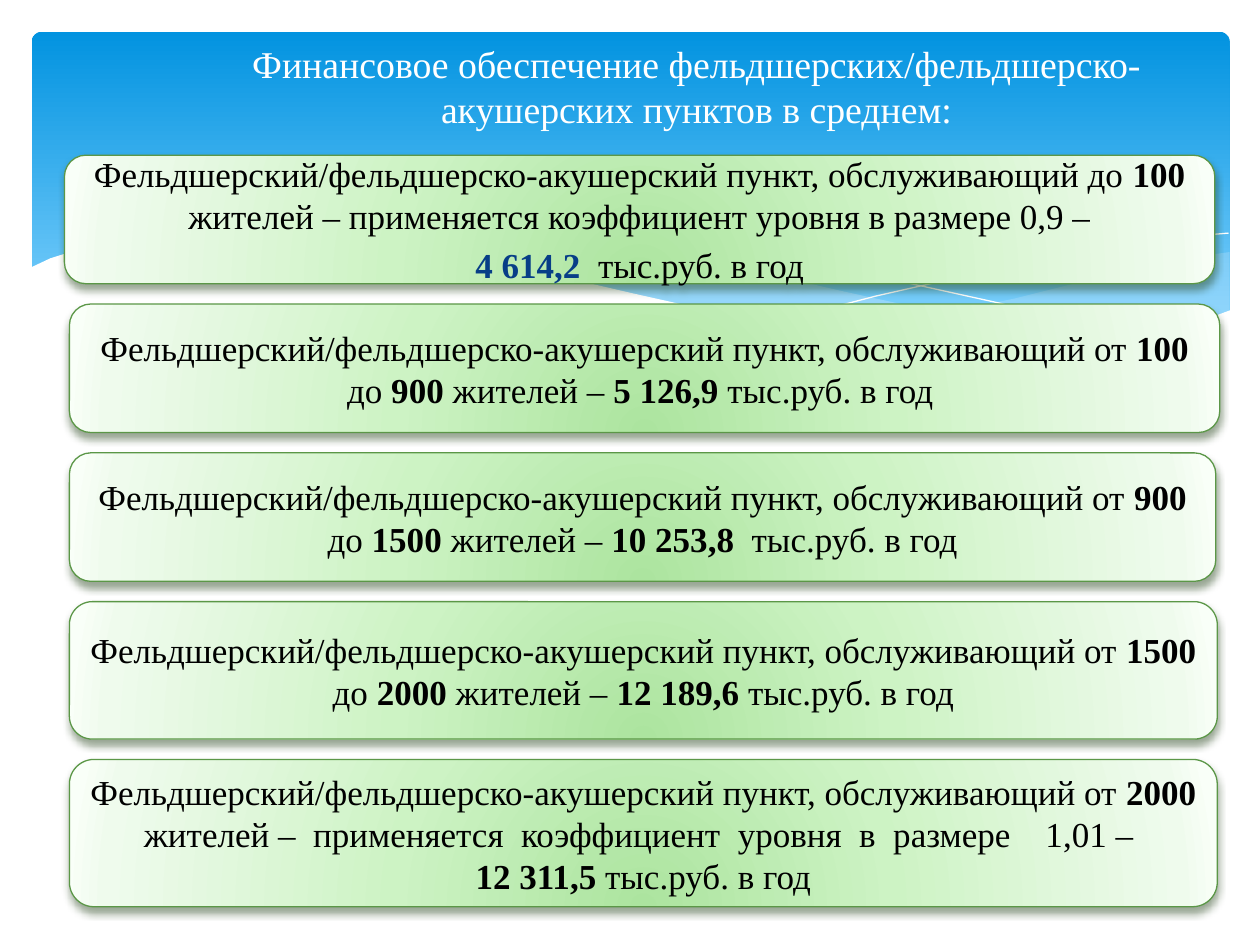
"""Slide on the average funding of rural paramedic stations, by population served."""
from collections import namedtuple

from lxml import etree
from pptx import Presentation
from pptx.dml.color import RGBColor
from pptx.enum.shapes import MSO_SHAPE
from pptx.enum.text import MSO_ANCHOR, MSO_AUTO_SIZE, PP_ALIGN
from pptx.oxml import parse_xml
from pptx.oxml.ns import qn
from pptx.util import Cm, Pt

ROUNDED = MSO_SHAPE.ROUNDED_RECTANGLE
MIDDLE = MSO_ANCHOR.MIDDLE
NO_AUTOFIT = MSO_AUTO_SIZE.NONE
CENTER = PP_ALIGN.CENTER

FONT = "Times New Roman"
WHITE, BLACK, NAVY = "FFFFFF", "000000", "073E87"
PALE_BLUE, CARD_EDGE = "C6E7FC", "5B9747"
SKY_STOPS = [(0, "0293E0"), (0.9, "83D3FE")]
CARD_STOPS = [(0, "ACE49F"), (43, "CDF3C4"), (93, "EFFBED"), (100, "F9FFF8")]
WAVE_UNIT = Cm(2.54) / 100

NS = 'xmlns:a="http://schemas.openxmlformats.org/drawingml/2006/main"'
CARD_GEOMETRY = f'<a:prstGeom {NS} prst="roundRect"><a:avLst/></a:prstGeom>'
STOPS_XML = "".join(
    f'<a:gs pos="{percent * 1000}"><a:srgbClr val="{tone}"/></a:gs>' for percent, tone in CARD_STOPS
)
CARD_GRADIENT = (
    f'<a:gradFill {NS} rotWithShape="1"><a:gsLst>{STOPS_XML}</a:gsLst><a:path path="circle">'
    '<a:fillToRect l="50000" t="130000" r="50000" b="-30000"/></a:path></a:gradFill>'
)
CARD_SHADOW = (
    f'<a:outerShdw {NS} blurRad="{Pt(4.5)}" dist="{Pt(3)}" dir="5400000" rotWithShape="0">'
    '<a:srgbClr val="2B4821"><a:alpha val="48000"/></a:srgbClr></a:outerShdw>'
)


def color(hex_value):
    return RGBColor.from_string(hex_value)


def add_run(paragraph, text, size, hex_value, bold=False):
    run = paragraph.add_run()
    run.text = text
    run.font.name, run.font.size, run.font.bold = FONT, Pt(size), bold
    run.font.color.rgb = color(hex_value)


prs = Presentation()
prs.slide_width, prs.slide_height = Cm(25.4), Cm(19.05)
slide = prs.slides.add_slide(prs.slide_layouts[1])
shapes = slide.shapes
title, first_card = slide.placeholders

sky = shapes.add_shape(ROUNDED, Cm(0.64), Cm(0.64), Cm(24.15), Cm(6.86))
sky.adjustments[0] = 0.03
sky.shadow.inherit = False
sky.line.fill.background()
sky.fill.gradient()
sky.fill.gradient_angle = 270
for stop, (position, tone) in zip(sky.fill.gradient_stops, SKY_STOPS):
    stop.position, stop.color.rgb = position, color(tone)

right_wave = [
    (976, 200), (948, 204), (921, 210), (891, 216), (861, 223), (805, 237), (753, 248), (706, 257),
    (661, 265), (691, 269), (719, 272), (745, 275), (769, 277), (803, 278), (835, 277), (863, 275),
    (889, 272), (913, 267), (935, 262), (963, 252), (976, 247),
]
long_wave = [
    (893, 273), (866, 269), (807, 260), (741, 247), (668, 231), (629, 222), (598, 214), (569, 208),
    (541, 203), (514, 198), (489, 194), (442, 189), (399, 186), (361, 185), (328, 187), (286, 191),
    (323, 196), (362, 203), (404, 211), (449, 222), (530, 240), (601, 255), (650, 264), (695, 270),
    (736, 275), (773, 277), (807, 278), (838, 278), (867, 276),
]
white_wave = [
    (977, 246), (950, 256), (920, 265), (887, 271), (850, 275), (809, 277), (761, 275), (708, 270),
    (648, 262), (579, 250), (503, 233), (447, 220), (391, 207), (340, 197), (292, 190), (250, 186),
    (211, 184), (161, 184), (119, 187), (85, 193), (59, 199), (40, 205), (23, 213), (23, 329),
    (977, 329),
]
falling_line = [
    (309, 195), (328, 192), (353, 189), (387, 187), (433, 187), (469, 189), (510, 192), (556, 197),
    (608, 204), (665, 213), (727, 226), (795, 241), (869, 261), (907, 272),
]
rising_line = [
    (613, 257), (653, 246), (695, 235), (748, 223), (806, 210), (866, 199), (895, 194), (924, 190),
    (951, 187), (975, 185),
]
Wave = namedtuple("Wave", "points tone opacity filled")
waves = [
    Wave(right_wave, PALE_BLUE, 29, True),
    Wave(long_wave, PALE_BLUE, 40, True),
    Wave(falling_line, WHITE, 100, False),
    Wave(rising_line, WHITE, 100, False),
    Wave(white_wave, WHITE, 100, True),
]
for wave in waves:
    builder = shapes.build_freeform(*wave.points[0], scale=WAVE_UNIT)
    builder.add_line_segments(wave.points[1:], close=wave.filled)
    ribbon = builder.convert_to_shape()
    ribbon.shadow.inherit = False
    if wave.filled:
        ribbon.line.fill.background()
        ribbon.fill.solid()
        ribbon.fill.fore_color.rgb = color(wave.tone)
        tint = ribbon.element.spPr.find(qn("a:solidFill"))[0]
        etree.SubElement(tint, qn("a:alpha")).set("val", str(wave.opacity * 1000))
    else:
        ribbon.fill.background()
        ribbon.line.color.rgb = color(wave.tone)
        ribbon.line.width = Pt(0)

for placeholder in (first_card, title):
    shapes._spTree.append(placeholder.element)

title.left, title.top, title.width, title.height = Cm(3.91), Cm(0.33), Cm(20.27), Cm(2.79)
title.text_frame.auto_size = NO_AUTOFIT
title.text_frame.vertical_anchor = MIDDLE
heading = title.text_frame.paragraphs[0]
heading.alignment = CENTER
add_run(heading, "Финансовое обеспечение фельдшерских/фельдшерско-акушерских пунктов в среднем:", 21.6, WHITE)

NBSP = chr(160)
STATION = "Фельдшерский/фельдшерско-акушерский пункт, обслуживающий"
PER_YEAR = "тыс.руб. в год"
BOLD_MARK = "*"
Card = namedtuple("Card", "left width height space_before lines")
cards = [
    Card(1.3, 23.19, 2.59, 4, [
        f"{STATION} до *100 *жителей – применяется коэффициент уровня в размере 0,9 –",
        f"*4 614,2  *{PER_YEAR}",
    ]),
    Card(1.4, 23.19, 2.59, 4, [f"{STATION} от *100 *до *900* жителей – *5 126,9 *{PER_YEAR} "]),
    Card(1.4, 23.11, 2.59, 0, [f"{STATION} от *900 *до *1500* жителей – *10 253,8  *{PER_YEAR}"]),
    Card(1.4, 23.14, 2.77, 0, [f"{STATION} от *1500* до *2000* жителей – *12 189,6 *{PER_YEAR}"]),
    Card(1.4, 23.14, 2.97, 0, [
        f"{STATION} от *2000* жителей –  применяется  коэффициент  уровня  в  размере    1,01 –  "
        f"*12{NBSP}311,5 *{PER_YEAR}",
    ]),
]
card_top, card_gap = 3.13, 0.41
for card in cards:
    box = Cm(card.left), Cm(card_top), Cm(card.width), Cm(card.height)
    card_top += card.height + card_gap
    if card is cards[0]:
        panel = first_card
        panel.left, panel.top, panel.width, panel.height = box
        panel.element.spPr.append(parse_xml(CARD_GEOMETRY))
    else:
        panel = shapes.add_shape(ROUNDED, *box)
    panel.element.spPr.append(parse_xml(CARD_GRADIENT))
    panel.line.color.rgb = color(CARD_EDGE)
    panel.line.width = Pt(0.75)
    panel.shadow.inherit = False
    panel.element.spPr.find(qn("a:effectLst")).append(parse_xml(CARD_SHADOW))

    frame = panel.text_frame
    frame.word_wrap = True
    frame.auto_size = NO_AUTOFIT
    frame.vertical_anchor = MIDDLE
    for line_number, line in enumerate(card.lines):
        paragraph = frame.add_paragraph() if line_number else frame.paragraphs[0]
        paragraph.alignment = CENTER
        paragraph.space_before = Pt(card.space_before)
        properties = paragraph._p.get_or_add_pPr()
        properties.set("marL", "0")
        properties.set("indent", "0")
        etree.SubElement(properties, qn("a:buNone"))
        bold_color = NAVY if line_number else BLACK
        for part_number, part in enumerate(line.split(BOLD_MARK)):
            bold = part_number % 2 == 1
            if part:
                add_run(paragraph, part, 20, bold_color if bold else BLACK, bold)

prs.save("out.pptx")
